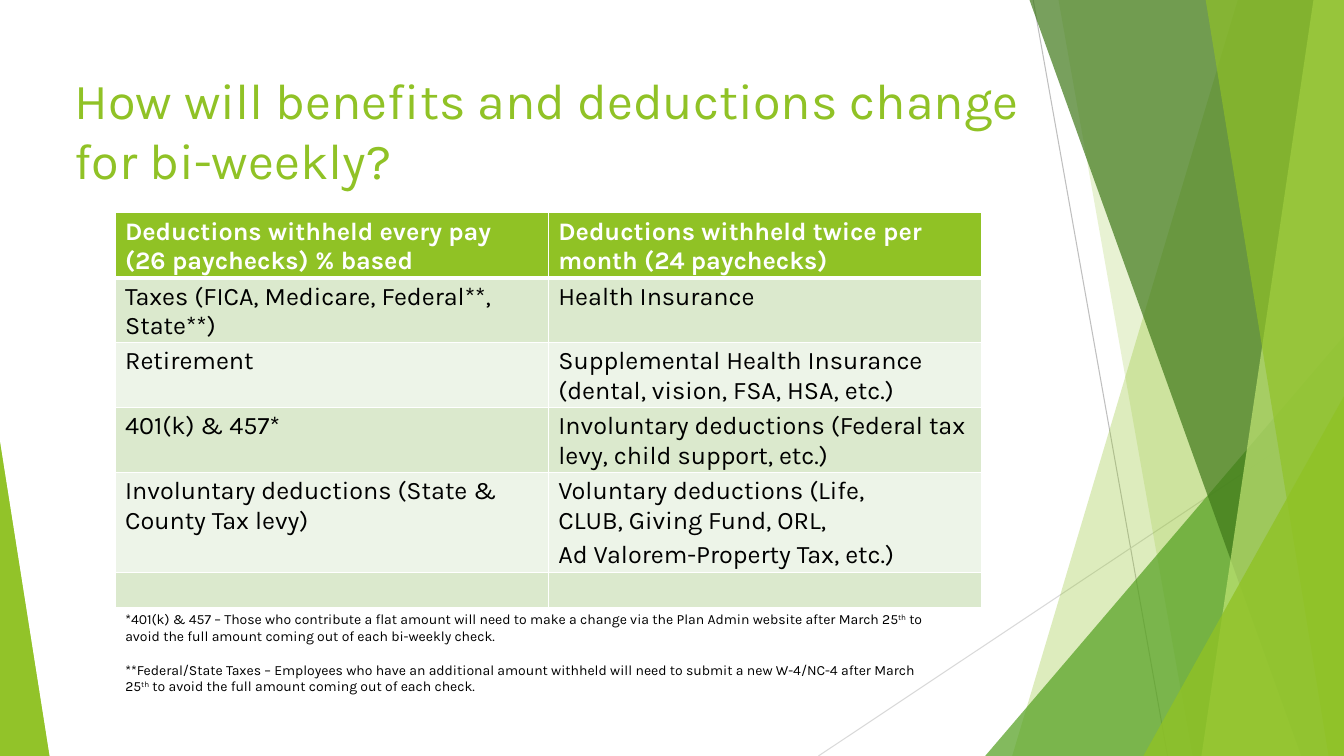
"""Build the slide on how benefits and deductions change under bi-weekly pay."""
import dataclasses

import lxml.etree
import pptx
import pptx.dml.color
import pptx.enum.shapes
import pptx.enum.text
import pptx.oxml.ns
import pptx.util

Pt = pptx.util.Pt
qn = pptx.oxml.ns.qn


@dataclasses.dataclass(frozen=True)
class Theme:
    font: str = "Karla"
    title_size: float = 36
    table_size: float = 18
    note_size: float = 10
    green: str = "90C226"
    header: str = "90C225"
    mid_green: str = "54A021"
    dark_green: str = "3F7819"
    pale_green: str = "C0E474"
    bands: tuple[str, str] = ("DBE9CD", "EDF4E8")
    white: str = "FFFFFF"
    black: str = "000000"
    grey: str = "BFBFBF"
    light_grey: str = "D9D9D9"


@dataclasses.dataclass(frozen=True)
class Ray:
    start: tuple[float, float]
    end: tuple[float, float]
    color: str


@dataclasses.dataclass(frozen=True)
class Facet:
    points: tuple[tuple[float, float], ...]
    color: str
    opacity: int


@dataclasses.dataclass(frozen=True)
class Wedge:
    left: float
    top: float
    width: float
    height: float
    apex: float
    color: str
    opacity: int


@dataclasses.dataclass(frozen=True)
class Row:
    height: float
    every_pay: str = ""
    twice_monthly: str = ""
    right_margins: tuple[float, float] = (0, 0)


@dataclasses.dataclass(frozen=True)
class Note:
    before: str
    after: str
    gap: float


THEME = Theme()
WIDTH, HEIGHT = 960, 540
TOP = -0.6


def band(top_left: float, bottom_left: float, color: str, opacity: int) -> Facet:
    """Return a facet that fills from a slanted edge to the right of the slide."""
    return Facet(((top_left, TOP), (WIDTH, TOP), (WIDTH, HEIGHT), (bottom_left, HEIGHT)),
                 color, opacity)


DECORATIONS = (
    Ray((738, 0), (834, 540), THEME.grey),
    Ray((960, 290), (584.6, 540), THEME.light_grey),
    band(884.3, 723, THEME.green, 30),
    band(756, 851.8, THEME.green, 20),
    Wedge(703.7, 240, 256.3, 300, 1, THEME.mid_green, 72),
    band(735.2, 929.5, THEME.dark_green, 70),
    band(938.3, 858.2, THEME.pale_green, 70),
    band(861.1, 949, THEME.green, 65),
    Wedge(816.7, 283, 143.3, 257, 1, THEME.green, 80),
    Wedge(0, 316, 35.3, 224, 0, THEME.green, 85),
    Facet(((0, 316), (0, 540), (35.3, 540)), THEME.header, 85),
)
ROWS = (
    Row(46.4, "Deductions withheld every pay (26 paychecks) % based",
        "Deductions withheld twice per month (24 paychecks)", (30, 30)),
    Row(46.4, "Taxes (FICA, Medicare, Federal**, State**)", "Health Insurance"),
    Row(46.4, "Retirement", "Supplemental Health Insurance (dental, vision, FSA, HSA, etc.)"),
    Row(46.4, "401(k) & 457*", "Involuntary deductions (Federal tax levy, child support, etc.)"),
    Row(71.5, "Involuntary deductions (State & County Tax levy)",
        "Voluntary deductions (Life, CLUB, Giving Fund, ORL,\nAd Valorem-Property Tax, etc.)",
        (0, 52)),
    Row(25),
)
NOTES = (
    Note("*401(k) & 457 – Those who contribute a flat amount will need to make a change "
         "via the Plan Admin website after March 25",
         " to avoid the full amount coming out of each bi-weekly check.", 0),
    Note("**Federal/State Taxes – Employees who have an additional amount withheld will need "
         "to submit a new W-4/NC-4 after March 25",
         " to avoid the full amount coming out of each check.", 12),
)


def rgb(color: str) -> pptx.dml.color.RGBColor:
    """Return the colour object for a hex value."""
    return pptx.dml.color.RGBColor.from_string(color)


def style(paragraph, size: float, color: str, bold: bool = False) -> None:
    """Set the font of a paragraph."""
    font = paragraph.font
    font.name, font.size, font.bold = THEME.font, Pt(size), bold
    font.color.rgb = rgb(color)


def draw_ray(shapes, ray: Ray) -> None:
    """Draw a thin background line."""
    line = shapes.add_connector(pptx.enum.shapes.MSO_CONNECTOR.STRAIGHT,
                                *map(Pt, ray.start + ray.end))
    line.line.color.rgb = rgb(ray.color)
    line.line.width = Pt(0.75)
    lxml.etree.SubElement(line._element.spPr, qn("a:effectLst"))


def draw_decoration(shapes, part: Facet | Wedge) -> None:
    """Draw a translucent facet or triangle."""
    if isinstance(part, Wedge):
        shape = shapes.add_shape(pptx.enum.shapes.MSO_SHAPE.ISOSCELES_TRIANGLE, Pt(part.left),
                                 Pt(part.top), Pt(part.width), Pt(part.height))
        shape.adjustments[0] = part.apex
    else:
        start, *others = [(Pt(x), Pt(y)) for x, y in part.points]
        outline = shapes.build_freeform(*start)
        outline.add_line_segments(others, close=True)
        shape = outline.convert_to_shape()
    shape.shadow.inherit = False
    shape.line.fill.background()
    shape.fill.solid()
    shape.fill.fore_color.rgb = rgb(part.color)
    tint = shape._element.spPr.find(qn("a:solidFill")).find(qn("a:srgbClr"))
    lxml.etree.SubElement(tint, qn("a:alpha"), val=str(part.opacity * 1000))


def add_borders(cell, top: float, bottom: float) -> None:
    """Give a cell white borders."""
    properties = cell._tc.get_or_add_tcPr()
    for side, width in (("L", 1), ("R", 1), ("T", top), ("B", bottom)):
        edge = lxml.etree.SubElement(properties, qn(f"a:ln{side}"), w=str(Pt(width)))
        fill = lxml.etree.SubElement(edge, qn("a:solidFill"))
        lxml.etree.SubElement(fill, qn("a:srgbClr"), val=THEME.white)


def draw_deductions(shapes) -> None:
    """Draw the table of deductions."""
    table = shapes.add_table(len(ROWS), 2, Pt(82.4), Pt(152), Pt(619),
                             Pt(sum(row.height for row in ROWS))).table
    table.first_row = table.horz_banding = False
    for column in table.columns:
        column.width = Pt(309.5)
    for index, row in enumerate(ROWS):
        table.rows[index].height = Pt(row.height)
        is_header = index == 0
        for column, text in enumerate((row.every_pay, row.twice_monthly)):
            cell = table.cell(index, column)
            add_borders(cell, 3 if index == 1 else 1, 3 if is_header else 1)
            cell.fill.solid()
            cell.fill.fore_color.rgb = rgb(THEME.header if is_header
                                           else THEME.bands[(index - 1) % 2])
            cell.margin_left, cell.margin_top, cell.margin_bottom = Pt(7), Pt(3), 0
            cell.margin_right = Pt(row.right_margins[column])
            cell.text = text
            for paragraph in cell.text_frame.paragraphs:
                paragraph.space_before = Pt(3.1)
                style(paragraph, THEME.table_size,
                      THEME.white if is_header else THEME.black, is_header)


def draw_notes(shapes) -> None:
    """Draw the footnotes below the table."""
    frame = shapes.add_textbox(Pt(82.4), Pt(432.7), Pt(594), Pt(80)).text_frame
    frame.word_wrap = True
    for index, note in enumerate(NOTES):
        paragraph = frame.add_paragraph() if index else frame.paragraphs[0]
        paragraph.space_before = Pt(note.gap)
        style(paragraph, THEME.note_size, THEME.black)
        paragraph.add_run().text = note.before
        ordinal = paragraph.add_run()
        ordinal.text = "th"
        ordinal.font._element.set("baseline", "30000")
        paragraph.add_run().text = note.after


def set_title(title) -> None:
    """Place and format the title."""
    title.left, title.top, title.width, title.height = map(Pt, (53.3, 48.2, 677, 103.7))
    frame = title.text_frame
    frame.text = "How will benefits and deductions change for bi-weekly?"
    frame.margin_left = frame.margin_right = frame.margin_bottom = 0
    frame.margin_top = Pt(1)
    frame.word_wrap = True
    frame.auto_size = pptx.enum.text.MSO_AUTO_SIZE.NONE
    frame.vertical_anchor = pptx.enum.text.MSO_ANCHOR.TOP
    heading = frame.paragraphs[0]
    heading.alignment = pptx.enum.text.PP_ALIGN.LEFT
    heading.space_before = Pt(1)
    style(heading, THEME.title_size, THEME.green)


def main() -> None:
    """Build and save the presentation."""
    deck = pptx.Presentation()
    deck.slide_width, deck.slide_height = Pt(WIDTH), Pt(HEIGHT)
    slide = deck.slides.add_slide(deck.slide_layouts.get_by_name("Title Only"))
    for part in DECORATIONS:
        (draw_ray if isinstance(part, Ray) else draw_decoration)(slide.shapes, part)
    set_title(slide.shapes.title)
    draw_deductions(slide.shapes)
    draw_notes(slide.shapes)
    deck.save("out.pptx")


if __name__ == "__main__":
    main()
